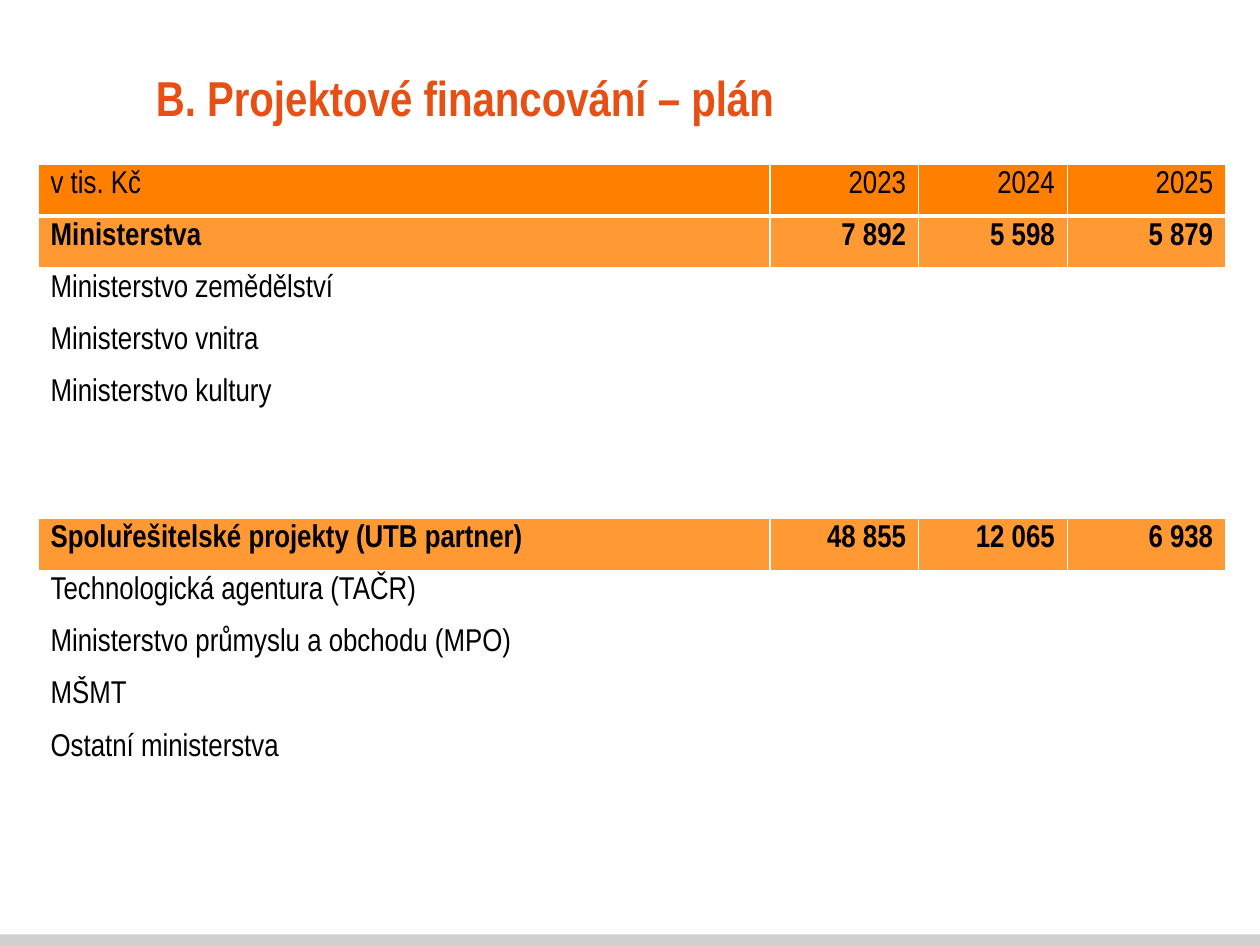
from lxml.etree import SubElement
from pptx import Presentation
from pptx.dml.color import RGBColor
from pptx.enum.shapes import MSO_SHAPE
from pptx.enum.text import MSO_ANCHOR, PP_ALIGN
from pptx.oxml.ns import qn
from pptx.util import Pt

# Content: row kind, then the cells that hold text
TITLE = "B. Projektové financování – plán"
ROWS = [
    ("header", "v tis. Kč", "2023", "2024", "2025"),
    ("total", "Ministerstva", "7 892", "5 598", "5 879"),
    ("item", "Ministerstvo zemědělství"),
    ("item", "Ministerstvo vnitra"),
    ("item", "Ministerstvo kultury"),
    ("item",),
    ("gap",),
    ("total", "Spoluřešitelské projekty (UTB partner)", "48 855", "12 065", "6 938"),
    ("item", "Technologická agentura (TAČR)"),
    ("item", "Ministerstvo průmyslu a obchodu (MPO)"),
    ("item", "MŠMT"),
    ("item", "Ostatní ministerstva"),
    ("item",),
    ("item",),
]

# Style
FONT = "Arial Narrow"
BLACK = RGBColor(0, 0, 0)
WHITE = RGBColor(255, 255, 255)
GREY = RGBColor(0xD0, 0xD0, 0xCE)
TITLE_ORANGE = RGBColor(0xE6, 0x50, 0x14)
HEADER_ORANGE = RGBColor(0xFF, 0x80, 0x01)
TOTAL_ORANGE = RGBColor(0xFF, 0x99, 0x33)
FILLS = {"header": HEADER_ORANGE, "total": TOTAL_ORANGE}
COLUMN_WIDTHS = [418.25, 85, 85, 90.5]
ROW_HEIGHT, GAP_HEIGHT = 29.75, 24.25
CELL_MARGIN = 3.6


def style_text(para, size, color, bold):
    font = para.font
    font.name, font.size, font.bold = FONT, Pt(size), bold
    font.color.rgb = color


def add_border(cell, side, width):
    line = SubElement(cell._tc.get_or_add_tcPr(), qn(f"a:{side}"), w=str(Pt(width)))
    fill = SubElement(line, qn("a:solidFill"))
    SubElement(fill, qn("a:srgbClr"), val=str(WHITE))


deck = Presentation()
deck.slide_width, deck.slide_height = Pt(720), Pt(540)
page = deck.slides.add_slide(deck.slide_layouts[6])

# Footer band
band = page.shapes.add_shape(MSO_SHAPE.RECTANGLE, Pt(0), Pt(534), Pt(720), Pt(6))
band.shadow.inherit = False
band.fill.solid()
band.fill.fore_color.rgb = GREY
band.line.fill.background()

# Title
title_box = page.shapes.add_textbox(Pt(82), Pt(26), Pt(584), Pt(58.25))
frame = title_box.text_frame
frame.word_wrap = True
frame.vertical_anchor = MSO_ANCHOR.MIDDLE
frame.text = TITLE
style_text(frame.paragraphs[0], 28, TITLE_ORANGE, True)

# Funding table
heights = [GAP_HEIGHT if kind == "gap" else ROW_HEIGHT for kind, *_ in ROWS]
table = page.shapes.add_table(
    len(ROWS), len(COLUMN_WIDTHS), Pt(21.75), Pt(93.75),
    Pt(sum(COLUMN_WIDTHS)), Pt(sum(heights))).table
table.first_row = table.horz_banding = False
for column, width in zip(table.columns, COLUMN_WIDTHS):
    column.width = Pt(width)

for row_index, (kind, *texts) in enumerate(ROWS):
    row = table.rows[row_index]
    row.height = Pt(heights[row_index])
    # The gap row is too low for the usual margins
    margin = Pt(0 if kind == "gap" else CELL_MARGIN)
    for column_index, cell in enumerate(row.cells):
        cell.margin_top = cell.margin_bottom = margin
        cell.vertical_anchor = MSO_ANCHOR.TOP
        for side in ("lnL", "lnR", "lnT", "lnB"):
            at_header_rule = (row_index, side) in ((0, "lnB"), (1, "lnT"))
            add_border(cell, side, 3 if at_header_rule else 1)
        cell.fill.solid()
        cell.fill.fore_color.rgb = FILLS.get(kind, WHITE)
        if column_index < len(texts):
            cell.text = texts[column_index]
            para = cell.text_frame.paragraphs[0]
            para.alignment = PP_ALIGN.RIGHT if column_index else PP_ALIGN.LEFT
            style_text(para, 18, BLACK, kind == "total")

deck.save("out.pptx")
